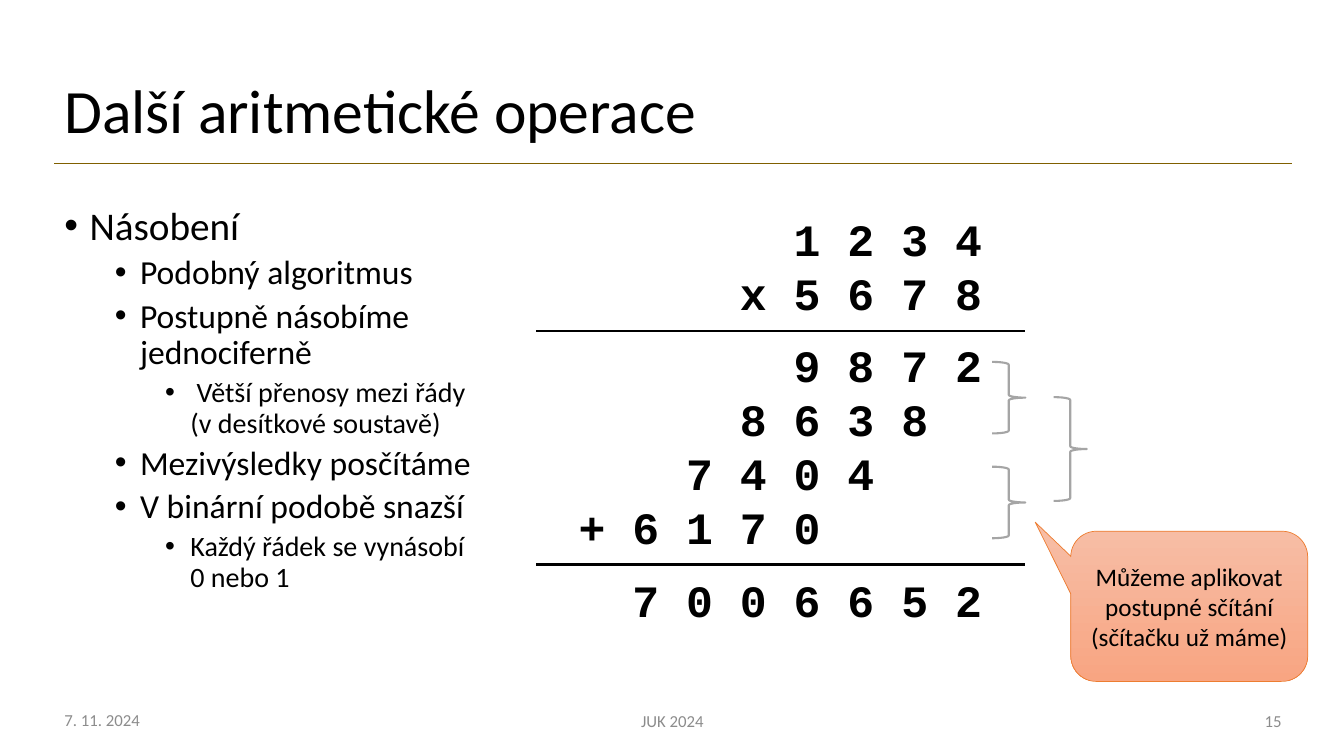
from lxml import etree
from pptx import Presentation
from pptx import util as u
from pptx.dml.color import RGBColor
from pptx.enum import shapes, text
from pptx.oxml import ns

COLORS = {
    "ink": "000000",
    "footer": "8C8C8C",
    "rule": "806000",
    "brace": "A5A5A5",
    "callout_top": "F7BDA5",
    "callout_bottom": "F8A582",
    "callout_line": "ED7D31",
}
ALIGN = text.PP_ALIGN
MIDDLE = text.MSO_ANCHOR.MIDDLE


def color(name):
    return RGBColor.from_string(COLORS[name])


def write(para, content, size=18, font="Calibri", ink="ink", bold=False,
          align=ALIGN.LEFT, before=0, spacing=None, margin=0, hanging=0, bullet=None):
    """Fill a paragraph; a newline in the content becomes a line break."""
    props = para._p.get_or_add_pPr()
    props.set("marL", str(u.Inches(margin)))
    props.set("indent", str(-u.Inches(hanging)))
    if bullet:
        etree.SubElement(props, ns.qn("a:buFont")).set("typeface", "Arial")
        etree.SubElement(props, ns.qn("a:buChar")).set("char", bullet)
    para.text = content
    para.alignment = align
    para.space_before = u.Pt(before)
    if spacing:
        para.line_spacing = spacing
    for span in para.runs:
        span.font.name = font
        span.font.size = u.Pt(size)
        span.font.bold = bold
        span.font.color.rgb = color(ink)


class SlideBuilder:
    def __init__(self, deck):
        self.page = deck.slides.add_slide(deck.slide_layouts[6])

    def text_box(self, left, top, width, height, paragraphs, anchor=text.MSO_ANCHOR.TOP):
        """Add a box from (content, format) pairs."""
        box = self.page.shapes.add_textbox(*map(u.Inches, (left, top, width, height)))
        frame = box.text_frame
        frame.word_wrap = True
        frame.vertical_anchor = anchor
        for index, (content, style) in enumerate(paragraphs):
            para = frame.add_paragraph() if index else frame.paragraphs[0]
            write(para, content, **style)

    def rule(self, left, right, y, ink="ink", weight=1.5):
        line = self.page.shapes.add_connector(
            shapes.MSO_CONNECTOR.STRAIGHT, *map(u.Inches, (left, y, right, y)))
        line.line.color.rgb = color(ink)
        line.line.width = u.Pt(weight)
        etree.SubElement(line._element.spPr, ns.qn("a:effectLst"))

    def shape(self, kind, left, top, width, height, ink, weight):
        shape = self.page.shapes.add_shape(kind, *map(u.Inches, (left, top, width, height)))
        shape.shadow.inherit = False
        shape.line.color.rgb = color(ink)
        shape.line.width = u.Pt(weight)
        return shape

    def brace(self, left, top, height):
        brace = self.shape(shapes.MSO_SHAPE.RIGHT_BRACE, left, top, 0.33, height, "brace", 1.5)
        brace.fill.background()

    def callout(self, left, top, width, height, content, adjustments):
        callout = self.shape(shapes.MSO_SHAPE.ROUNDED_RECTANGULAR_CALLOUT,
                             left, top, width, height, "callout_line", 0.5)
        for index, value in enumerate(adjustments):
            callout.adjustments[index] = value
        callout.fill.gradient()
        callout.fill.gradient_angle = 270
        for stop, name in zip(callout.fill.gradient_stops, ("callout_top", "callout_bottom")):
            stop.color.rgb = color(name)
        frame = callout.text_frame
        frame.word_wrap = True
        frame.vertical_anchor = MIDDLE
        write(frame.paragraphs[0], content, align=ALIGN.CENTER)


def main():
    deck = Presentation()
    deck.slide_width, deck.slide_height = u.Inches(13.33), u.Inches(7.5)
    slide = SlideBuilder(deck)

    # Title
    slide.rule(0.54, 12.81, 1.62, "rule", 1)
    slide.text_box(0.54, 0.4, 11.08, 1.45,
                   [("Další aritmetické operace", dict(size=44, spacing=0.9))], MIDDLE)

    # Bulleted outline: level and wording
    outline = [
        (0, "Násobení"),
        (1, "Podobný algoritmus"),
        (1, "Postupně násobíme jednociferně"),
        (2, " Větší přenosy mezi řády\n(v desítkové soustavě)"),
        (1, "Mezivýsledky posčítáme"),
        (1, "V binární podobě snazší"),
        (2, "Každý řádek se vynásobí\n0 nebo 1"),
    ]
    slide.text_box(0.54, 2, 4.78, 4.76, [
        (content, dict(size=28 - 4 * level, spacing=0.9, before=5 if level else 0,
                       margin=0.25 + 0.5 * level, hanging=0.25, bullet="•"))
        for level, content in outline])

    # Long multiplication: first column, digits, gap above in points
    column_width = 32 * 0.6 / 72
    sums = [
        (8, "1 2 3 4", 0),
        (6, "x 5 6 7 8", 0),
        (8, "9 8 7 2", 13.6),
        (6, "8 6 3 8", 0),
        (4, "7 4 0 4", 0),
        (0, "+ 6 1 7 0", 0),
        (2, "7 0 0 6 6 5 2", 13.6),
    ]
    slide.text_box(5.64, 2.05, 4.25, 4.34, [
        (digits, dict(size=32, font="Courier New", bold=True, before=gap,
                      margin=column * column_width))
        for column, digits, gap in sums])
    for y in (3.28, 5.6):
        slide.rule(5.32, 10.17, y)

    # Braces pairing the partial products
    for left, top, height in ((9.84, 3.59, 0.71), (9.84, 4.63, 0.71), (10.45, 3.94, 1.03)):
        slide.brace(left, top, height)
    slide.callout(10.62, 5.27, 2.35, 1.49,
                  "Můžeme aplikovat postupné sčítání (sčítačku už máme)",
                  (-0.65, -0.56, 0.17))

    # Footer
    for left, top, width, content, align in (
            (0.54, 6.94, 3, "7. 11. 2024", ALIGN.LEFT),
            (4.42, 6.95, 4.5, "JUK 2024", ALIGN.CENTER),
            (9.81, 6.95, 3, "15", ALIGN.RIGHT)):
        slide.text_box(left, top, width, 0.4,
                       [(content, dict(size=12, ink="footer", align=align))], MIDDLE)

    deck.save("out.pptx")


if __name__ == "__main__":
    main()
